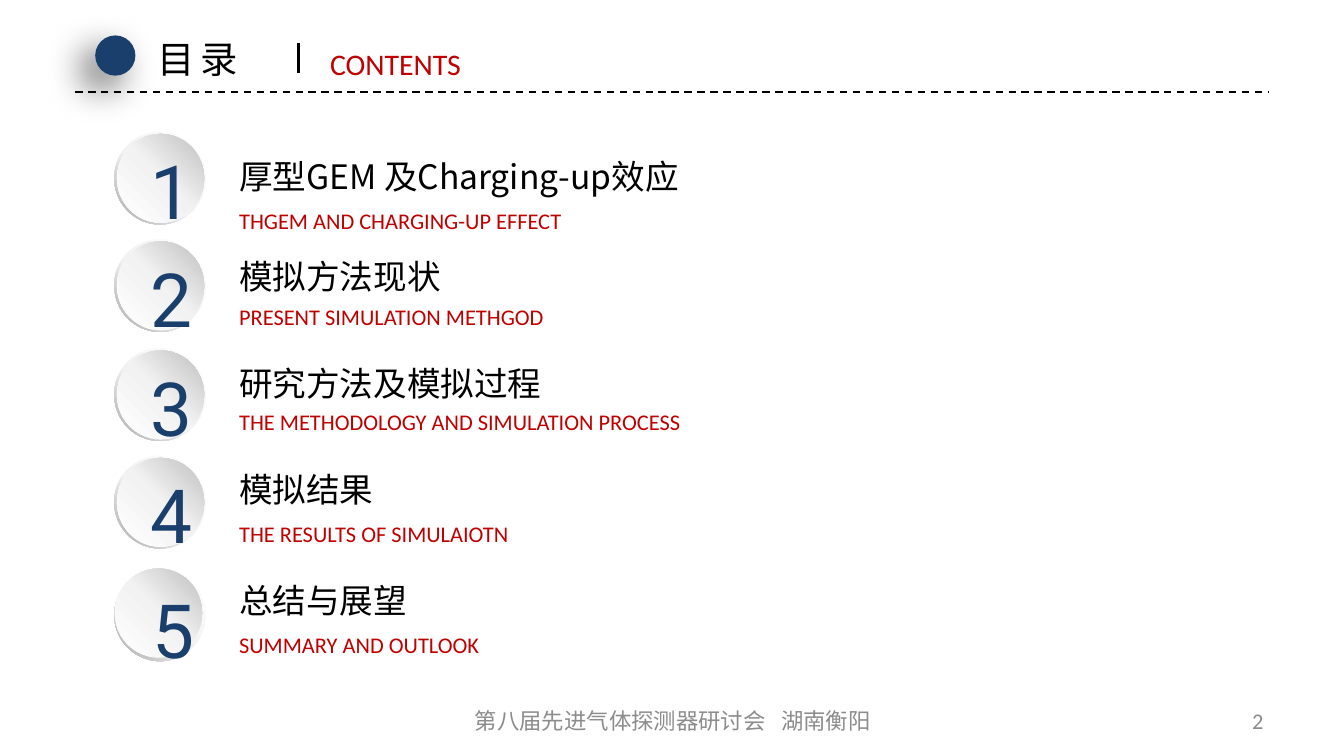
from lxml import etree
from pptx import Presentation
from pptx.dml.color import RGBColor as Rgb
from pptx.enum.dml import MSO_LINE as Dash
from pptx.enum.shapes import MSO_CONNECTOR as Link, MSO_SHAPE as Kind
from pptx.enum.text import MSO_ANCHOR as Anchor, MSO_AUTO_SIZE as Auto, PP_ALIGN as Align
from pptx.oxml import parse_xml
from pptx.oxml.ns import nsdecls, qn
from pptx.util import Cm, Pt

HUE = {"ink": "000000", "navy": "1A3F6C", "red": "C00000", "gray": "8C8C8C",
       "white": "FFFFFF", "pale": "F2F2F2", "mid": "BFBFBF", "dark": "A6A6A6"}
SANS = "Calibri"
HAN = "Noto Sans CJK SC"

deck = Presentation()
deck.slide_width, deck.slide_height = Cm(25.4), Cm(14.28)
slide = deck.slides.add_slide(deck.slide_layouts[6])
root = slide.shapes


def write(home, x, y, w, h, runs, size, face, hue, wrap=False, grow=True, align=Align.LEFT):
    box = home.add_textbox(Cm(x), Cm(y), Cm(w), Cm(h))
    frame = box.text_frame
    frame.word_wrap = wrap
    frame.auto_size = Auto.SHAPE_TO_FIT_TEXT if grow else Auto.NONE
    frame.vertical_anchor = Anchor.TOP if grow else Anchor.MIDDLE
    para = frame.paragraphs[0]
    para.alignment = align
    for text, gap in runs:
        run = para.add_run()
        run.text = text
        run.font.size = Pt(size)
        run.font.name = face
        run.font.color.rgb = Rgb.from_string(HUE[hue])
        prop = run.font._element
        etree.SubElement(prop, qn("a:ea")).set("typeface", HAN)
        if gap:
            prop.set("spc", str(gap))


def disc(home, kind, x, y, w, h, stops, angle):
    shape = home.add_shape(kind, Cm(x), Cm(y), Cm(w), Cm(h))
    shape.shadow.inherit = False
    shape.line.fill.background()
    marks = "".join(f'<a:gs pos="{pos * 1000}"><a:srgbClr val="{HUE[hue]}"/></a:gs>'
                    for pos, hue in stops)
    fill = parse_xml(f'<a:gradFill {nsdecls("a")} rotWithShape="1"><a:gsLst>{marks}</a:gsLst>'
                     f'<a:lin ang="{angle * 60000}" scaled="0"/></a:gradFill>')
    shape._element.spPr.find(qn("a:prstGeom")).addnext(fill)
    return shape


for x1, y1, x2, y2, wide, dash in [
    (1.42, 1.73, 23.98, 1.73, 1, Dash.DASH),
    (5.64, 0.81, 5.64, 1.37, 1.5, None),
]:
    rule = root.add_connector(Link.STRAIGHT, Cm(x1), Cm(y1), Cm(x2), Cm(y2))
    rule.line.color.rgb = Rgb.from_string(HUE["ink"])
    rule.line.width = Pt(wide)
    rule.line.dash_style = dash
    etree.SubElement(rule._element.spPr, qn("a:effectLst"))

dot = root.add_shape(Kind.OVAL, Cm(1.8), Cm(0.67), Cm(0.76), Cm(0.76))
dot.fill.solid()
dot.fill.fore_color.rgb = Rgb.from_string(HUE["navy"])
dot.line.fill.background()
dot._element.spPr.append(parse_xml(
    f'<a:effectLst {nsdecls("a")}><a:outerShdw blurRad="{Pt(20)}" dist="{Pt(10)}" '
    f'dir="{135 * 60000}" algn="tr" rotWithShape="0"><a:srgbClr val="{HUE["ink"]}">'
    '<a:alpha val="60000"/></a:srgbClr></a:outerShdw></a:effectLst>'))

write(root, 2.72, 0.56, 2.16, 1.12, [("目录", 300)], 20, HAN, "ink")
write(root, 5.99, 0.74, 3.38, 0.94, [("CONTENTS", 0)], 16, SANS, "red")

rows = [
    (2.49, 0, "厚型GEM 及Charging-up效应", 2.82, 10.54, True,
     "THGEM AND CHARGING-UP EFFECT", 3.78, 7.42, False),
    (4.52, 0, "模拟方法现状", 4.7, 4.37, False,
     "PRESENT SIMULATION METHGOD", 5.61, 11.73, True),
    (6.58, 0, "研究方法及模拟过程", 6.73, 6.27, False,
     "THE METHODOLOGY AND SIMULATION PROCESS", 7.59, 11.1, True),
    (8.61, 0, "模拟结果", 8.74, 3.07, False,
     "THE RESULTS OF SIMULAIOTN", 9.7, 7.47, True),
    (10.74, 0.04, "总结与展望", 10.82, 3.71, False,
     "SUMMARY AND OUTLOOK", 11.79, 5.49, False),
]
for num, (top, nudge, head, y1, w1, wrap1, sub, y2, w2, wrap2) in enumerate(rows, 1):
    badge = root.add_group_shape().shapes
    ring = disc(badge, Kind.DONUT, 2.16, top, 1.73, 1.75,
                [(0, "white"), (55, "pale"), (100, "dark")], 135)
    ring.adjustments[0] = 0.05
    disc(badge, Kind.OVAL, 2.21 - nudge, top + 0.04 - nudge, 1.65, 1.68,
         [(0, "white"), (51, "pale"), (100, "mid")], 315)
    write(badge, 2.59 + nudge, top + 0.13 + nudge, 0.99, 1.96,
          [(str(num), 0)], 40, "Roboto", "navy")
    write(root, 4.27, y1, w1, 1.02, [(head, 0)], 18, HAN, "ink", wrap1)
    write(root, 4.27, y2, w2, 0.76, [(sub, 0)], 12, SANS, "red", wrap2)

foot = [("第八届先进气体探测器研讨会", 0), (" ", 540), ("湖南衡阳", 0)]
write(root, 8.69, 13.23, 8.05, 0.76, foot, 12, SANS, "gray", True, False, Align.CENTER)
write(root, 18.21, 13.23, 5.92, 0.76, [("2", 0)], 12, SANS, "gray", True, False, Align.RIGHT)

deck.save("out.pptx")
